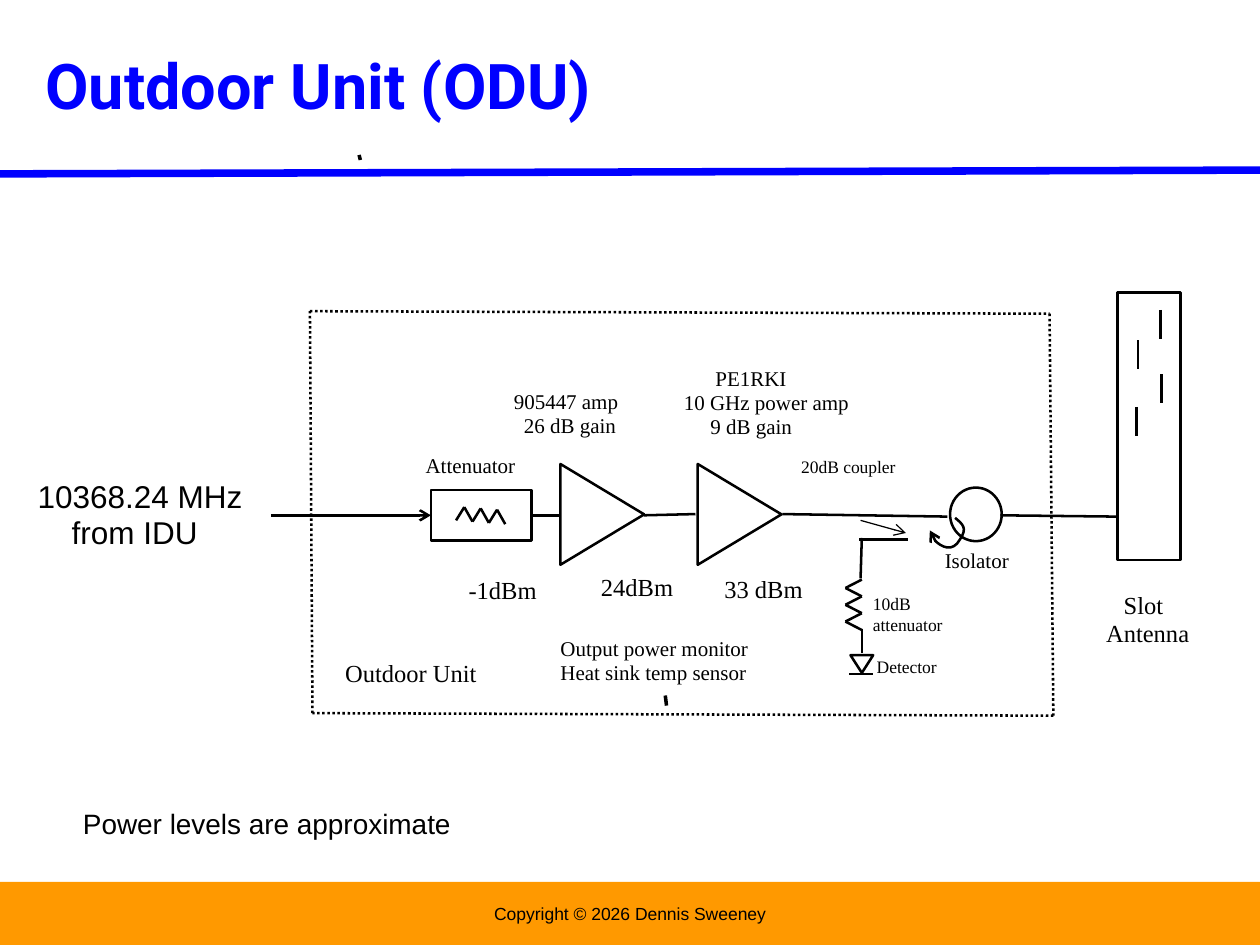
from itertools import pairwise

from lxml.etree import SubElement
from pptx import Presentation
from pptx.dml.color import RGBColor
from pptx.enum.dml import MSO_LINE_DASH_STYLE as Dash
from pptx.enum.shapes import MSO_CONNECTOR as Connector, MSO_SHAPE as Shape
from pptx.enum.text import MSO_ANCHOR as Anchor, PP_ALIGN as Align
from pptx.oxml.ns import qn
from pptx.util import Inches, Pt

COLORS = {"ink": "000000", "blue": "0000FF", "orange": "FF9900"}
SANS, SERIF, HEADING = "Arial", "Times New Roman", "Roboto"
COLUMNS, ROWS = 100, 75
LEFT, RIGHT = 1, 3  # connection sites of a rectangle


def color(name):
    return RGBColor.from_string(COLORS[name])


def bezier(start, first, second, end, steps=8):
    """Points along a cubic curve, without its start."""
    for step in range(1, steps + 1):
        t = step / steps
        u = 1 - t
        yield tuple(u**3 * a + 3 * u * u * t * b + 3 * u * t * t * c + t**3 * d
                    for a, b, c, d in zip(start, first, second, end))


class Diagram:
    """Draws on one slide; lengths are columns and rows of its grid."""

    def __init__(self, presentation):
        self.slide = presentation.slides.add_slide(presentation.slide_layouts[6])
        self.shapes = self.slide.shapes
        self.column = presentation.slide_width / COLUMNS
        self.row = presentation.slide_height / ROWS
        self.weight = 1.45

    def point(self, column, row):
        return round(column * self.column), round(row * self.row)

    def style_line(self, line, ink="ink", weight=None, dash=None, arrow=False):
        line.color.rgb = color(ink)
        line.width = Pt(weight or self.weight)
        if dash:
            line.dash_style = dash
        if arrow:
            SubElement(line._get_or_add_ln(), qn("a:tailEnd"), type="arrow")

    def outline(self, kind, column, row, width, height, rotation=0):
        shape = self.shapes.add_shape(
            kind, *self.point(column, row), *self.point(width, height))
        shape.shadow.inherit = False
        shape.rotation = rotation
        shape.fill.background()
        self.style_line(shape.line)
        return shape

    def band(self, column, row, width, height, fill):
        shape = self.outline(Shape.RECTANGLE, column, row, width, height)
        shape.fill.solid()
        shape.fill.fore_color.rgb = color(fill)
        shape.line.fill.background()

    def line(self, start, end, **style):
        connector = self.shapes.add_connector(
            Connector.STRAIGHT, *self.point(*start), *self.point(*end))
        self.style_line(connector.line, **style)
        SubElement(connector._element.spPr, qn("a:effectLst"))
        return connector

    def chain(self, points, **style):
        for start, end in pairwise(points):
            self.line(start, end, **style)

    def curve(self, points, **style):
        start, *rest = (self.point(*place) for place in points)
        builder = self.shapes.build_freeform(*start)
        builder.add_line_segments(rest, close=False)
        shape = builder.convert_to_shape()
        shape.shadow.inherit = False
        shape.fill.background()
        self.style_line(shape.line, **style)

    def text(self, text, column, row, width, height, size=12, font=SERIF, ink="ink",
             bold=False, align=Align.LEFT, anchor=Anchor.TOP, spacing=0.95,
             margins=(0.1, 0.05), indents=()):
        box = self.shapes.add_textbox(
            *self.point(column, row), *self.point(width, height))
        frame = box.text_frame
        frame.word_wrap = True
        frame.vertical_anchor = anchor
        frame.margin_left = frame.margin_right = Inches(margins[0])
        frame.margin_top = frame.margin_bottom = Inches(margins[1])
        frame.text = text
        for paragraph in frame.paragraphs:
            paragraph.alignment = align
            paragraph.line_spacing = spacing
            paragraph.font.size = Pt(size)
            paragraph.font.name = font
            paragraph.font.bold = bold
            paragraph.font.color.rgb = color(ink)
        for paragraph, indent in zip(frame.paragraphs, indents):
            paragraph._p.get_or_add_pPr().set("marL", str(Inches(indent)))


def draw_frame(diagram):
    # Footer, title and rule
    diagram.band(0, 70, 100, 5, "orange")
    diagram.text("Copyright © 2026 Dennis Sweeney", 34.2, 68.3, 31.6, 5.6, size=10,
                 font=SANS, align=Align.CENTER, anchor=Anchor.BOTTOM, spacing=0.93)
    diagram.text("Outdoor Unit (ODU)", 3.6, 1.3, 90, 10.8, size=36, font=HEADING,
                 ink="blue", bold=True, anchor=Anchor.MIDDLE, spacing=1.01,
                 margins=(0, 0))
    diagram.line((0, 13.8), (100, 13.5), ink="blue", weight=4.31)

    # Dotted border of the outdoor unit
    diagram.chain([(24.8, 56.6), (24.6, 24.7), (83.3, 24.9), (83.6, 56.8),
                   (24.8, 56.6)], dash=Dash.ROUND_DOT)

    # Short ticks
    diagram.line((52.9, 56), (52.8, 55.2), weight=2)
    diagram.line((28.6, 12.7), (28.5, 12.3), weight=2)


def draw_signal_path(diagram):
    # Attenuator with its zigzag
    attenuator = diagram.outline(Shape.RECTANGLE, 34.2, 38.9, 8, 4)
    diagram.chain([(36.2 + 0.65 * i, (40.2 if i % 2 else 41.3) + 0.05 * i)
                   for i in range(7)])

    # Amplifiers and isolator
    for column in (43.8, 54.7):
        diagram.outline(Shape.ISOSCELES_TRIANGLE, column, 37.5, 8, 6.65, rotation=90)
    diagram.outline(Shape.OVAL, 75.4, 38.7, 4.1, 4.25)
    bend = (76.2, 42.8)
    diagram.curve([(75.8, 41.1),
                   *bezier((75.8, 41.1), (76.4, 41.6), (76.8, 41.9), bend),
                   *bezier(bend, (75.6, 43.9), (74.7, 43.4), (74.2, 42.9)),
                   (73.9, 42.4), (73.8, 42.1)], arrow=True)

    # Antenna with its slots
    diagram.outline(Shape.RECTANGLE, 88.7, 23.2, 5, 21.25)
    for column, row in ((92.1, 24.6), (90.3, 27), (92.2, 29.7), (90.2, 32.3)):
        diagram.line((column, row), (column, row + 2.3))

    # Links from left to right
    feed = diagram.line((21.5, 40.9), (34.2, 40.9), arrow=True)
    feed.end_connect(attenuator, LEFT)
    link = diagram.line((42.2, 40.9), (44.4, 40.9))
    link.begin_connect(attenuator, RIGHT)
    diagram.line((51.1, 40.9), (55.2, 40.8))
    diagram.line((62.1, 40.8), (75.2, 41))
    diagram.line((79.4, 40.9), (88.6, 41))


def draw_detector_branch(diagram):
    # Coupler
    diagram.line((68.2, 42.8), (72.1, 42.8))
    diagram.line((68.4, 42.7), (68.3, 45.9))
    diagram.line((68.3, 41.3), (71.9, 42.3), weight=0.71, arrow=True)
    # Resistor
    diagram.chain([(67.1 if i % 2 else 68.4, 46 + i * 2 / 3) for i in range(7)])
    # Detector diode
    diagram.line((68.4, 49.9), (68.4, 51.8))
    diagram.outline(Shape.ISOSCELES_TRIANGLE, 67.5, 52, 1.8, 1.4, rotation=180)
    diagram.line((67.4, 53.5), (69.3, 53.5))


def draw_labels(diagram):
    # Parts
    diagram.text("905447 amp\n26 dB gain", 39.8, 30.5, 13.9, 5.3, indents=(0, 0.08))
    diagram.text("PE1RKI\n10 GHz power amp\n9 dB gain", 53.3, 28.7, 15.4, 7,
                 indents=(0.25, 0, 0.21))
    diagram.text("Attenuator", 32.8, 35.6, 10.3, 3)
    diagram.text("Isolator", 74, 43.1, 10.3, 3)
    diagram.text("Output power monitor\nHeat sink temp sensor", 43.5, 50.1, 20.3, 7)
    diagram.text("Outdoor Unit", 26.4, 51.9, 13.9, 3.4, size=14)
    diagram.text("Slot\nAntenna", 86.8, 46.5, 9.8, 5.7, size=14, indents=(0.14, 0))

    # Power levels
    for level, column, row in (("-1dBm", 36.2, 45.3), ("24dBm", 46.7, 45.1),
                               ("33 dBm", 56.5, 45.2)):
        diagram.text(level, column, row, 9.8, 4.3, size=14)

    # Detector branch
    for label, column, row, width, height in (
            ("10dB attenuator", 68.3, 46.6, 10, 4.1),
            ("Detector", 68.6, 51.6, 10.8, 2.7),
            ("20dB coupler", 62.6, 35.7, 10.8, 4)):
        diagram.text(label, column, row, width, height, size=10, spacing=1)

    # Input and remark
    diagram.text("10368.24 MHz\nfrom IDU", 2, 37.6, 18.9, 6.3, size=18, font=SANS,
                 indents=(0, 0.27))
    diagram.text("Power levels are approximate", 5.6, 63.7, 32.9, 3.9, size=16,
                 font=SANS)


def main():
    presentation = Presentation()
    presentation.slide_width, presentation.slide_height = Inches(10), Inches(7.5)
    diagram = Diagram(presentation)
    for draw in (draw_frame, draw_signal_path, draw_detector_branch, draw_labels):
        draw(diagram)
    presentation.save("out.pptx")


if __name__ == "__main__":
    main()
